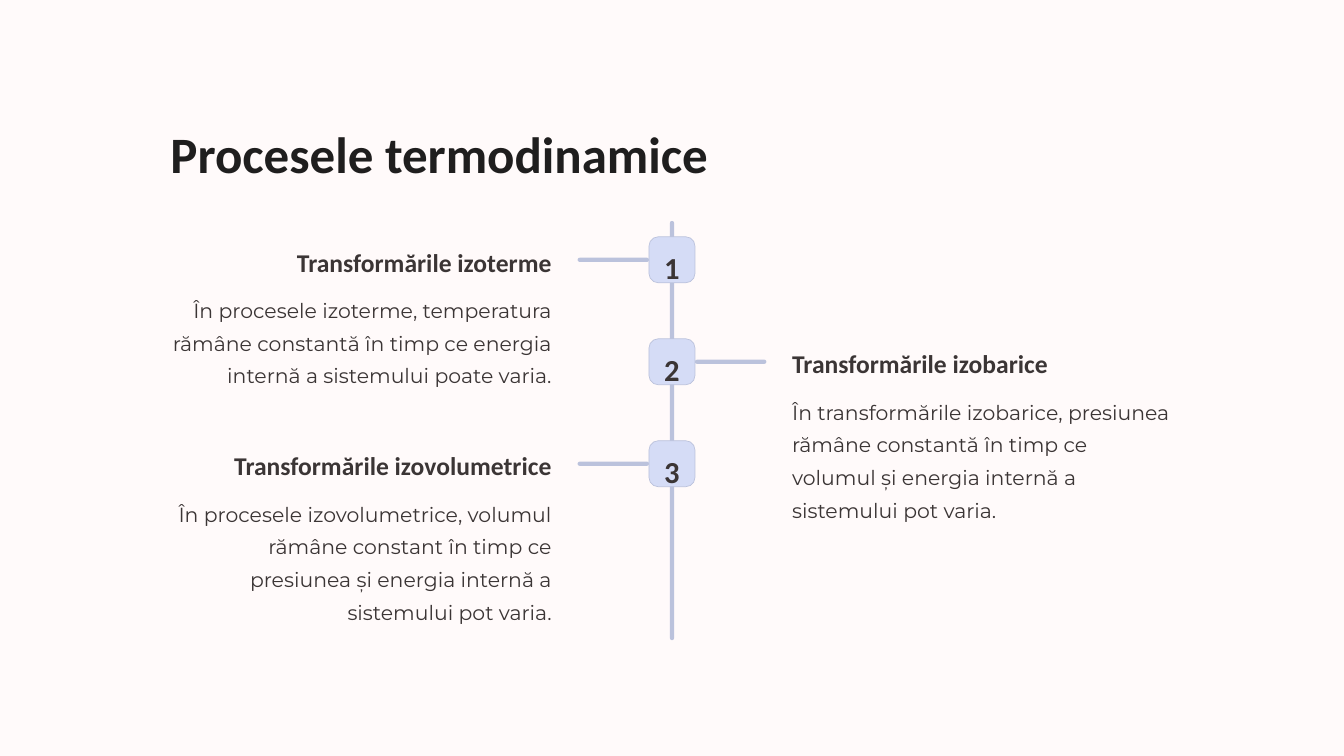
from dataclasses import dataclass

from pptx import Presentation
from pptx.dml.color import RGBColor
from pptx.enum.shapes import MSO_SHAPE
from pptx.enum.text import MSO_ANCHOR, PP_ALIGN
from pptx.util import Pt

ROUND = MSO_SHAPE.ROUNDED_RECTANGLE
TOP = MSO_ANCHOR.TOP
LEFT, MID, RIGHT = PP_ALIGN.LEFT, PP_ALIGN.CENTER, PP_ALIGN.RIGHT


@dataclass(frozen=True)
class Theme:
    """Colours and type styles: font, size, line pitch, bold, colour."""
    page: str = "FFFAFA"
    bar: str = "BBC2DC"
    badge: str = "D5DCF6"
    title: tuple = ("Calibri", 43.7, 54.7, True, "1F1E1E")
    digit: tuple = ("Calibri", 26.2, 32.8, True, "3B3535")
    head: tuple = ("Calibri", 21.9, 27.3, True, "3B3535")
    body: tuple = ("Montserrat", 17.5, 28, False, "3B3535")


class Deck:
    """Draws styled elements on the current slide."""

    def __init__(self, theme):
        """Open a wide deck with one blank slide."""
        self.theme = theme
        self.prs = Presentation()
        self.prs.slide_width, self.prs.slide_height = Pt(1152), Pt(648)
        self.slide = self.prs.slides.add_slide(self.prs.slide_layouts[6])
        self.paint(self.slide.background.fill, theme.page)

    def paint(self, fill, color):
        """Set a solid colour."""
        fill.solid()
        fill.fore_color.rgb = RGBColor.from_string(color)

    def label(self, frame, text, style, align):
        """Put one styled run into a text frame."""
        name, size, pitch, bold, color = style
        frame.vertical_anchor = TOP
        para = frame.paragraphs[0]
        para.alignment, para.line_spacing = align, Pt(pitch)
        run = para.add_run()
        run.text = text
        font = run.font
        font.name, font.size, font.bold = name, Pt(size), bold
        font.color.rgb = RGBColor.from_string(color)

    def text(self, box, text, style, align=LEFT):
        """Add a wrapping text box."""
        frame = self.slide.shapes.add_textbox(*map(Pt, box)).text_frame
        frame.word_wrap = True
        self.label(frame, text, style, align)

    def block(self, box, color, curve):
        """Add a rounded block without outline."""
        shape = self.slide.shapes.add_shape(ROUND, *map(Pt, box))
        shape.adjustments[0] = curve
        shape.shadow.inherit = False
        self.paint(shape.fill, color)
        shape.line.fill.background()
        return shape

    def bar(self, box):
        """Add a bar with round ends."""
        self.block(box, self.theme.bar, 0.5)

    def badge(self, box, text):
        """Add an outlined badge with its number."""
        shape = self.block(box, self.theme.badge, 0.2)
        self.paint(shape.line.fill, self.theme.bar)
        shape.line.width = Pt(0.6)
        frame = shape.text_frame
        frame.margin_left = frame.margin_right = frame.margin_bottom = 0
        frame.margin_top = Pt(6.8)
        self.label(frame, text, self.theme.digit, MID)


AXIS, THICK, SIDE, ARM = 576, 3.6, 39.4, 61.2
FIRST, STEP, GAP, WIDE = 203, 87.4, 15, 341.3
STEPS = [
    ("Transformările izoterme", 268, 84,
     "În procesele izoterme, temperatura rămâne constantă în timp ce "
     "energia internă a sistemului poate varia."),
    ("Transformările izobarice", 269, 84,
     "În transformările izobarice, presiunea rămâne constantă în timp ce "
     "volumul și energia internă a sistemului pot varia."),
    ("Transformările izovolumetrice", 333, 112,
     "În procesele izovolumetrice, volumul rămâne constant în timp ce "
     "presiunea și energia internă a sistemului pot varia."),
]


def main():
    """Build the timeline slide."""
    theme = Theme()
    deck = Deck(theme)
    deck.text((139, 99.4, 568, 54.7), "Procesele termodinamice", theme.title)
    deck.bar((AXIS - THICK / 2, 189.4, THICK, 359.3))
    for i, (head, width, height, body) in enumerate(STEPS):
        top = FIRST + i * STEP
        near = SIDE / 2
        edge = near + ARM + GAP
        if i % 2:
            arm, align = AXIS + near, LEFT
            head_x = body_x = AXIS + edge
        else:
            arm, align = AXIS - near - ARM, RIGHT
            head_x, body_x = AXIS - edge - width, AXIS - edge - WIDE
        deck.bar((arm, top + near - THICK / 2, ARM, THICK))
        deck.badge((AXIS - near, top, SIDE, SIDE), str(i + 1))
        deck.text((head_x, top + 3.7, width, 27.3), head, theme.head, align)
        deck.text((body_x, top + 41.8, WIDE, height), body, theme.body, align)
    deck.prs.save("out.pptx")


if __name__ == "__main__":
    main()
